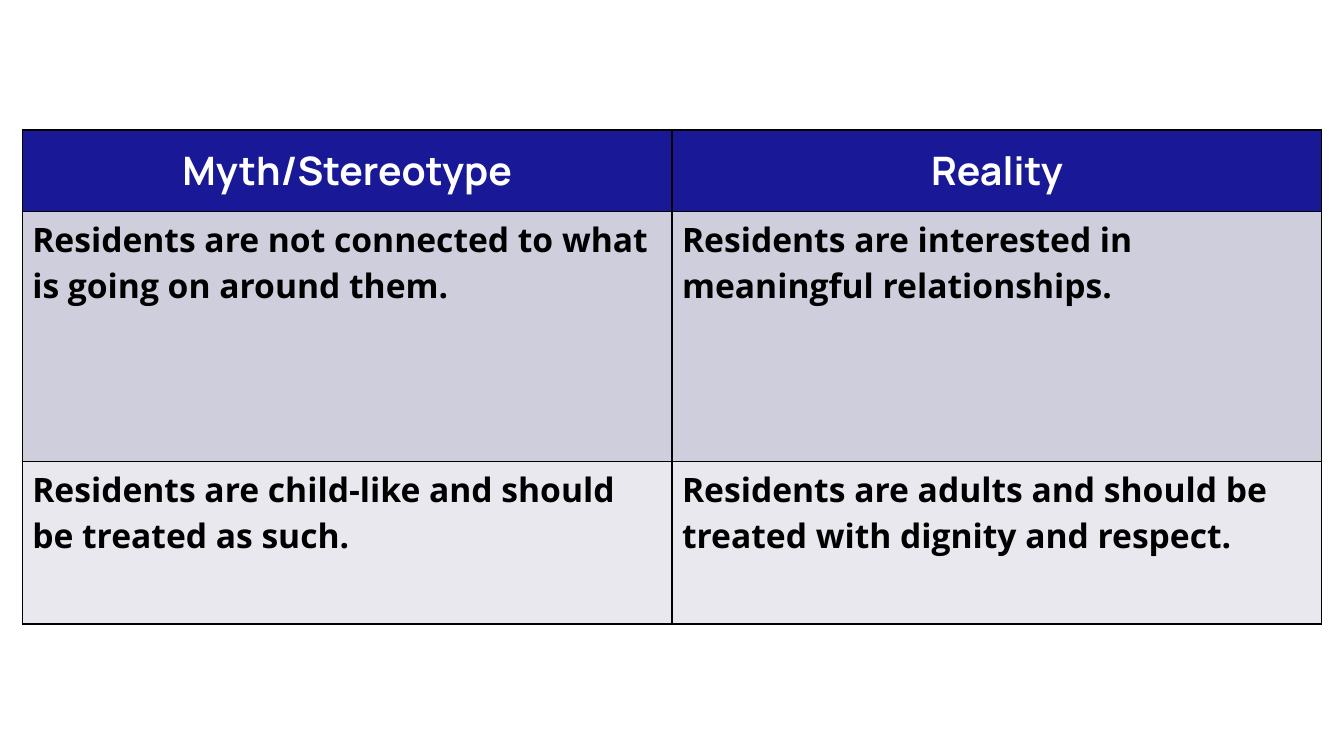
from pptx import Presentation, util as u
from pptx.dml.color import RGBColor
from pptx.enum import text
from pptx.oxml import parse_xml
from pptx.oxml.ns import nsdecls

BLACK = RGBColor(0x00, 0x00, 0x00)
WHITE = RGBColor(0xFF, 0xFF, 0xFF)
NAVY = RGBColor(0x19, 0x19, 0x98)
LILAC = RGBColor(0xCF, 0xCE, 0xDD)
PALE = RGBColor(0xE9, 0xE8, 0xEF)

# Height in inches, fill, and the two cell texts of each row
ROWS = [
    (0.81, NAVY, ("Myth/Stereotype", "Reality")),
    (2.48, LILAC, ("Residents are not connected to what is going on around them.",
                   "Residents are interested in meaningful relationships.")),
    (1.61, PALE, ("Residents are child-like and should be treated as such.",
                  "Residents are adults and should be treated with dignity and respect.")),
]


def edge(cell):
    """Draw a 1 pt black border on all four sides, ahead of the fill."""
    props = cell._tc.get_or_add_tcPr()
    for i, side in enumerate(("lnL", "lnR", "lnT", "lnB")):
        props.insert(i, parse_xml(
            f'<a:{side} {nsdecls("a")} w="{u.Pt(1)}"><a:solidFill>'
            f'<a:srgbClr val="{BLACK}"/></a:solidFill></a:{side}>'))


# Slide
deck = Presentation()
deck.slide_width, deck.slide_height = u.Inches(13.33), u.Inches(7.5)
slide = deck.slides.add_slide(deck.slide_layouts[6])

# Table, centred across the slide
wide = u.Inches(12.89)
high = u.Inches(sum(row[0] for row in ROWS))
left = (deck.slide_width - wide) // 2
grid = slide.shapes.add_table(len(ROWS), 2, left, u.Inches(1.29), wide, high).table
for col in grid.columns:
    col.width = wide // 2

# Cells
for r, (tall, fill, words) in enumerate(ROWS):
    grid.rows[r].height = u.Inches(tall)
    head = r == 0
    for c, word in enumerate(words):
        cell = grid.cell(r, c)
        cell.fill.solid()
        cell.fill.fore_color.rgb = fill
        edge(cell)
        cell.vertical_anchor = text.MSO_ANCHOR.MIDDLE if head else text.MSO_ANCHOR.TOP
        para = cell.text_frame.paragraphs[0]
        para.alignment = text.PP_ALIGN.CENTER if head else text.PP_ALIGN.LEFT
        run = para.add_run()
        run.text = word
        run.font.name = "Manrope" if head else "Open Sans"
        run.font.size = u.Pt(28 if head else 24)
        run.font.bold = True
        run.font.color.rgb = WHITE if head else BLACK

deck.save("out.pptx")
